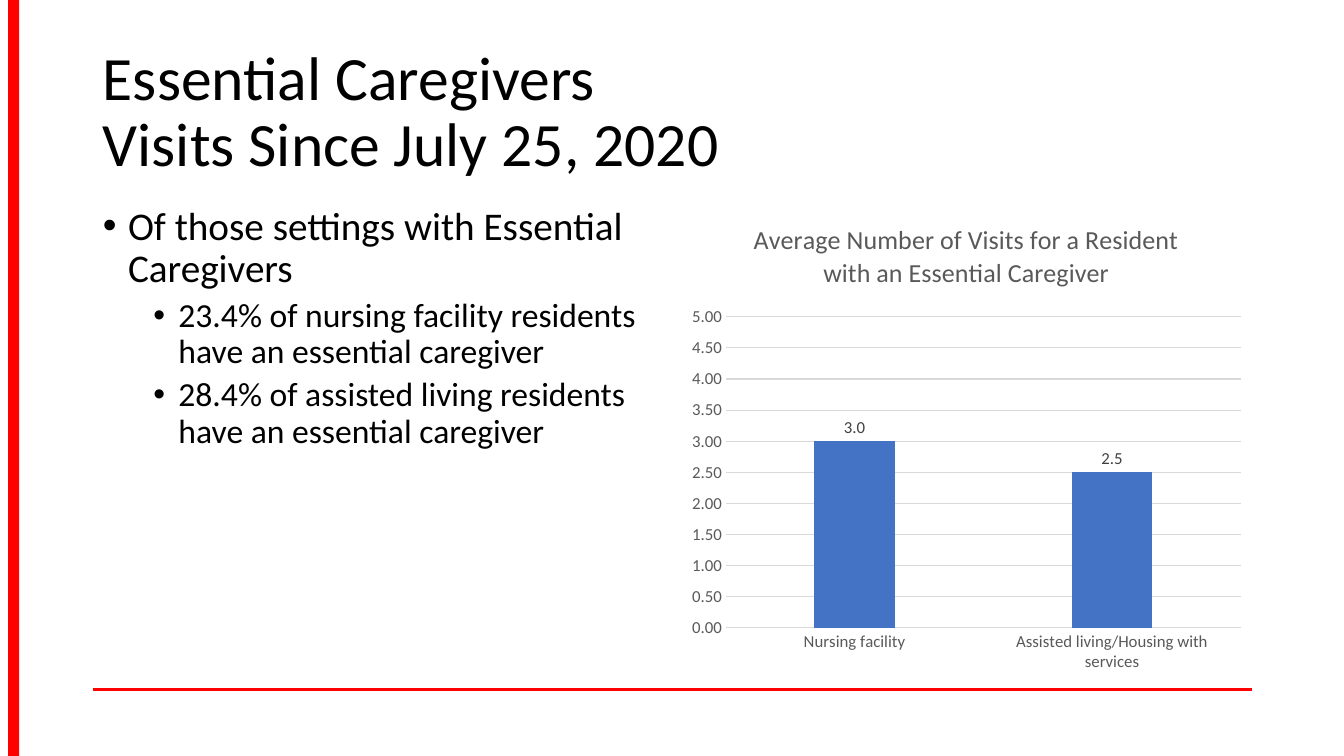
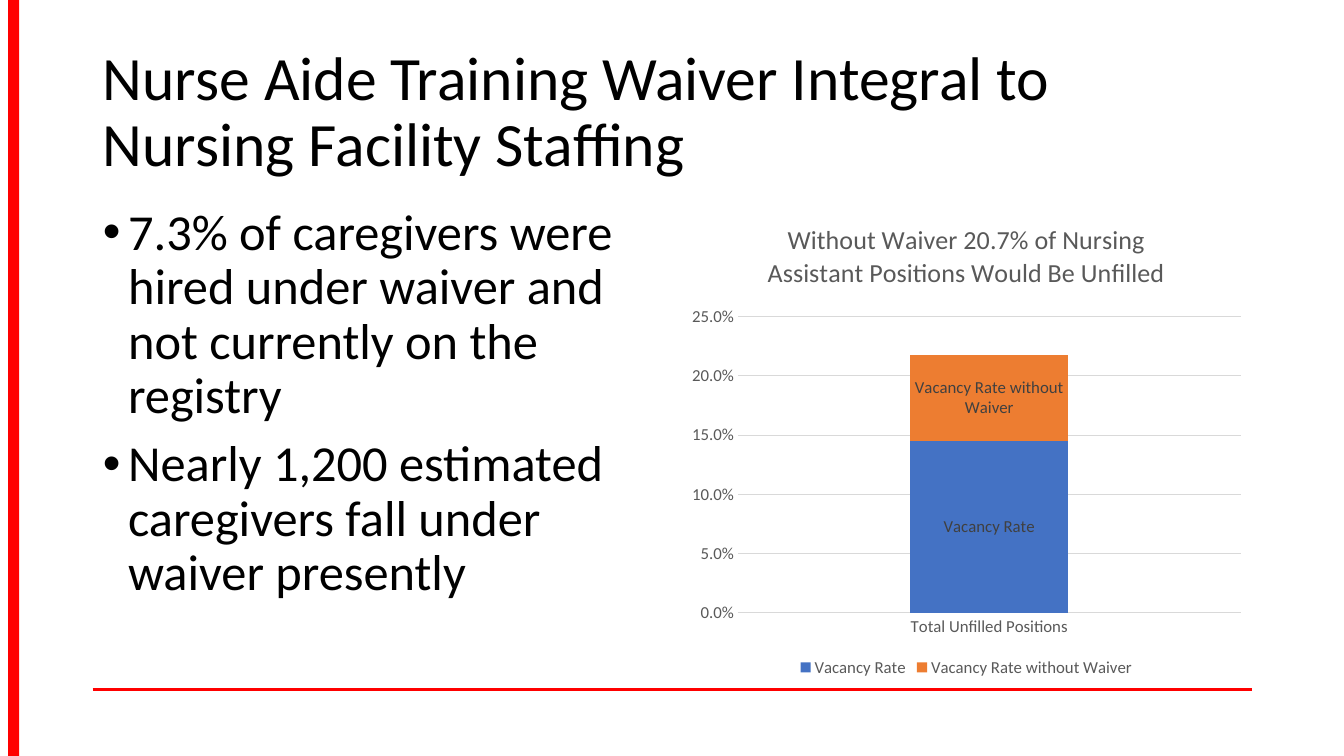
from pptx import Presentation
from pptx.chart.data import CategoryChartData
from pptx.dml.color import RGBColor
from pptx.enum.chart import XL_CHART_TYPE as CT, XL_LABEL_POSITION as LP
from pptx.enum.chart import XL_LEGEND_POSITION as LegendPos, XL_TICK_MARK as Tick
from pptx.enum.shapes import MSO_CONNECTOR as CONN, MSO_SHAPE as SHAPE
from pptx.enum.text import MSO_ANCHOR as ANCHOR, MSO_AUTO_SIZE as AUTO, PP_ALIGN as ALIGN
from pptx.oxml.xmlchemy import OxmlElement
from pptx.util import Inches, Pt

COLORS = {
    "accent": "FF0000", "text": "000000", "blue": "4472C4", "orange": "ED7D31",
    "axis": "595959", "label": "404040", "grid": "D9D9D9",
}
FONT = "Calibri"

# Page grid in inches: two columns between the side margins
W, H = 13.33, 7.5
LEFT, CONTENT_W, GAP = 0.92, 11.5, 0.16
COL_W = (CONTENT_W - GAP) / 2
TITLE_TOP, TITLE_H = 0.4, 1.45
BODY_TOP, BODY_H = 2, 4.76
RULE_Y = 6.84


def rgb(name):
    return RGBColor.from_string(COLORS[name])


def box(col, span, top, height):
    """Left, top, width and height of a box on the two-column grid."""
    left = LEFT + col * (COL_W + GAP)
    width = span * COL_W + (span - 1) * GAP
    return [Inches(v) for v in (left, top, width, height)]


def place(sp, bounds):
    sp.left, sp.top, sp.width, sp.height = bounds


def style_font(font, size, color):
    font.name, font.size, font.bold = FONT, Pt(size), False
    font.color.rgb = rgb(color)


def style_line(line, color, width):
    line.color.rgb = rgb(color)
    line.width = Pt(width)


# Shared frame: side band and bottom rule
def add_frame(s):
    rule = s.shapes.add_connector(CONN.STRAIGHT, Inches(LEFT), Inches(RULE_Y),
                                  Inches(LEFT + CONTENT_W), Inches(RULE_Y))
    style_line(rule.line, "accent", 2)
    rule._element.spPr.append(OxmlElement("a:effectLst"))
    band = s.shapes.add_shape(SHAPE.RECTANGLE, Inches(0.08), 0, Inches(0.11), Inches(H))
    band.shadow.inherit = False
    band.fill.solid()
    band.fill.fore_color.rgb = rgb("accent")
    band.line.fill.background()


# Title and bullet placeholders
def add_title(s, lines):
    sp = s.shapes.title
    place(sp, box(0, 2, TITLE_TOP, TITLE_H))
    tf = sp.text_frame
    tf.word_wrap, tf.auto_size = True, AUTO.NONE
    tf.vertical_anchor = ANCHOR.MIDDLE
    p = tf.paragraphs[0]
    p.alignment, p.line_spacing = ALIGN.LEFT, 0.9
    for i, line in enumerate(lines):
        if i:
            p.add_line_break()
        r = p.add_run()
        r.text = line
        style_font(r.font, 44, "text")


def set_bullet(p, level):
    pPr = p._p.get_or_add_pPr()
    pPr.set("marL", str(Inches(0.25 + 0.5 * level)))
    pPr.set("indent", str(Inches(-0.25)))
    for tag, attr, value in (("a:buFont", "typeface", "Arial"), ("a:buChar", "char", "•")):
        el = OxmlElement(tag)
        el.set(attr, value)
        pPr.append(el)


def add_bullets(s, items):
    """Fill the body placeholder with (level, size, text) items."""
    sp = s.placeholders[1]
    place(sp, box(0, 1, BODY_TOP, BODY_H))
    tf = sp.text_frame
    tf.word_wrap, tf.auto_size = True, AUTO.NONE
    for i, (level, size, text) in enumerate(items):
        p = tf.add_paragraph() if i else tf.paragraphs[0]
        p.level = level
        set_bullet(p, level)
        p.line_spacing = 0.9
        p.space_before = Pt((10, 5)[level] if i else 0)
        r = p.add_run()
        r.text = text
        style_font(r.font, size, "text")


# Column charts
def style_axes(chart, top, step, fmt):
    cat, val = chart.category_axis, chart.value_axis
    for axis in (cat, val):
        axis.major_tick_mark = axis.minor_tick_mark = Tick.NONE
        style_font(axis.tick_labels.font, 12, "axis")
    style_line(cat.format.line, "grid", 0.75)
    val.format.line.fill.background()
    val.minimum_scale, val.maximum_scale, val.major_unit = 0, top, step
    val.tick_labels.number_format = fmt
    val.tick_labels.number_format_is_linked = False
    style_line(val.major_gridlines.format.line, "grid", 0.75)


def add_column_chart(s, kind, title, cats, series, overlap, axis):
    """Add a chart; series holds (name, values, color)."""
    data = CategoryChartData()
    data.categories = cats
    for name, values, _ in series:
        data.add_series(name, values)
    chart = s.shapes.add_chart(kind, *box(1, 1, BODY_TOP, BODY_H), data).chart
    style_font(chart.font, 10, "text")
    chart.has_title, chart.has_legend = True, False
    chart.chart_title.include_in_layout = False
    r = chart.chart_title.text_frame.paragraphs[0].add_run()
    r.text = title
    style_font(r.font, 18.6, "axis")
    style_axes(chart, *axis)
    plot = chart.plots[0]
    plot.gap_width, plot.overlap, plot.vary_by_categories = 219, overlap, False
    for ser, (_, _, color) in zip(plot.series, series):
        ser.format.fill.solid()
        ser.format.fill.fore_color.rgb = rgb(color)
    return chart


def add_value_labels(chart, fmt):
    for ser in chart.plots[0].series:
        labels = ser.data_labels
        labels.show_value = True
        labels.number_format, labels.number_format_is_linked = fmt, False
        labels.position = LP.OUTSIDE_END
        style_font(labels.font, 12, "label")


def add_name_labels(chart):
    for ser in chart.plots[0].series:
        label = ser.points[0].data_label
        r = label.text_frame.paragraphs[0].add_run()
        r.text = ser.name
        style_font(r.font, 12, "label")
        label.position = LP.CENTER


def add_legend(chart):
    chart.has_legend = True
    chart.legend.position = LegendPos.BOTTOM
    chart.legend.include_in_layout = False
    style_font(chart.legend.font, 12, "axis")


def add_slide(prs, title, bullets):
    s = prs.slides.add_slide(prs.slide_layouts[1])
    add_frame(s)
    add_title(s, title)
    add_bullets(s, bullets)
    return s


def main():
    prs = Presentation()
    prs.slide_width, prs.slide_height = Inches(W), Inches(H)

    # Visits
    s = add_slide(prs, ["Essential Caregivers", "Visits Since July 25, 2020"], [
        (0, 28, "Of those settings with Essential Caregivers"),
        (1, 24, "23.4% of nursing facility residents have an essential caregiver"),
        (1, 24, "28.4% of assisted living residents have an essential caregiver"),
    ])
    visits = "Average Number of Visits for a Resident with an Essential Caregiver"
    chart = add_column_chart(
        s, CT.COLUMN_CLUSTERED, visits,
        ["Nursing facility", "Assisted living/Housing with services"],
        [(visits, [3, 2.5], "blue")], -27, (5, 0.5, "#,##0.00"))
    add_value_labels(chart, "#,##0.0")

    # Staffing
    s = add_slide(prs, ["Nurse Aide Training Waiver Integral to Nursing Facility Staffing"], [
        (0, 36, "7.3% of caregivers were hired under waiver and not currently on the registry"),
        (0, 36, "Nearly 1,200 estimated caregivers fall under waiver presently"),
    ])
    chart = add_column_chart(
        s, CT.COLUMN_STACKED,
        "Without Waiver 20.7% of Nursing Assistant Positions Would Be Unfilled",
        ["Total Unfilled Positions"],
        [("Vacancy Rate", [0.145], "blue"),
         ("Vacancy Rate without Waiver", [0.073], "orange")],
        100, (0.25, 0.05, "0.0%"))
    add_name_labels(chart)
    add_legend(chart)

    prs.save("out.pptx")


if __name__ == "__main__":
    main()
